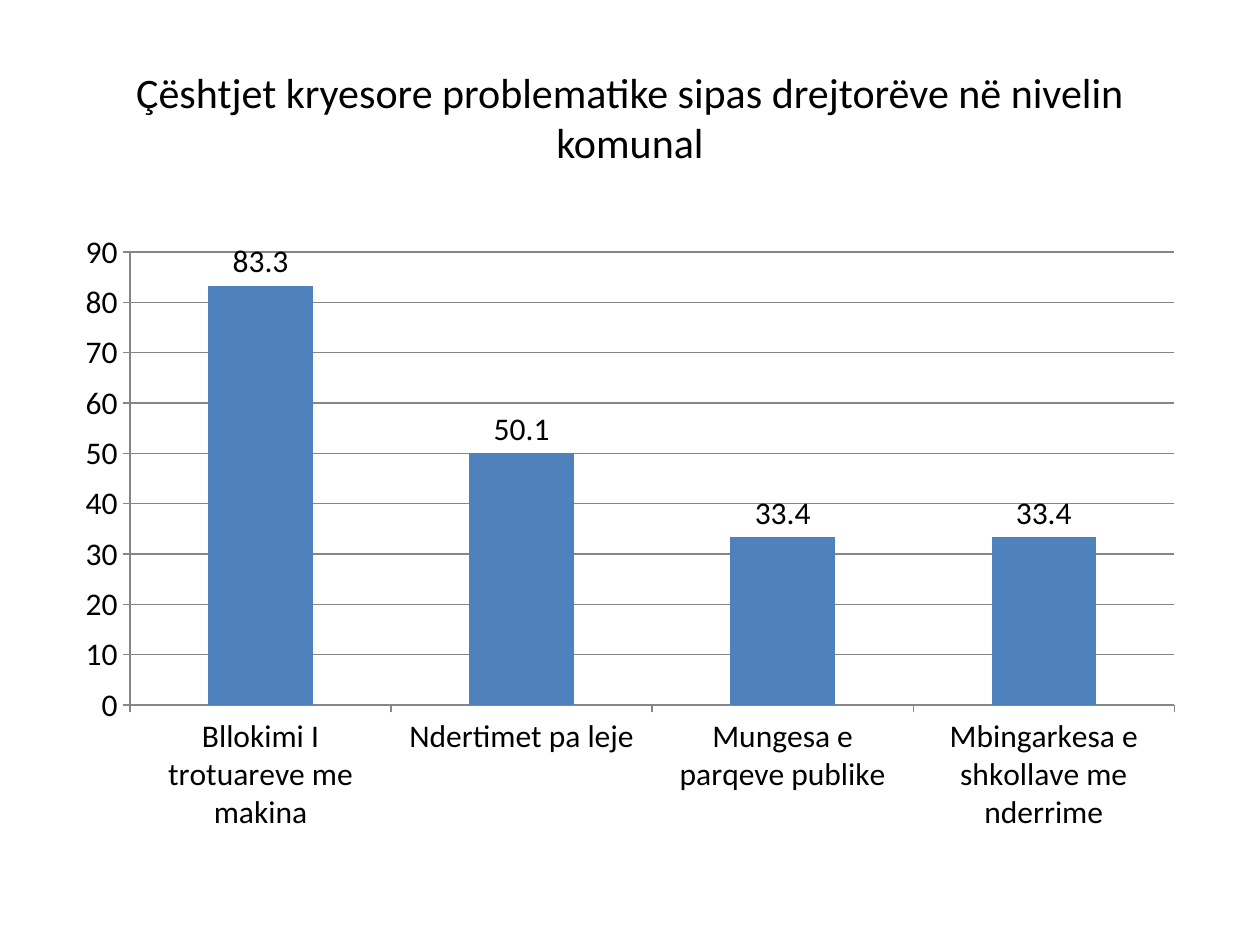
from typing import NamedTuple

from pptx import Presentation
from pptx.chart.data import CategoryChartData
from pptx.dml.color import RGBColor
from pptx.enum.chart import XL_CHART_TYPE, XL_LABEL_POSITION, XL_TICK_MARK
from pptx.enum.text import MSO_ANCHOR, PP_ALIGN
from pptx.util import Inches, Pt

BLACK = RGBColor(0, 0, 0)
BLUE = RGBColor(0x4F, 0x81, 0xBD)
GRAY = RGBColor(0x86, 0x86, 0x86)
FACE = "Calibri"
WIDE, HIGH = Inches(10), Inches(7.5)


class Box(NamedTuple):
    left: float
    top: float
    width: float
    height: float

    def scale(self) -> tuple[int, int, int, int]:
        return (round(self.left * WIDE), round(self.top * HIGH),
                round(self.width * WIDE), round(self.height * HIGH))


class Issue(NamedTuple):
    name: str
    share: float


HEAD = Box(0.05, 0.04, 0.9, 1 / 6)
PLOT = Box(0.05, 0.7 / 3, 0.9, 0.66)
ISSUES = [
    Issue("Bllokimi I trotuareve me makina", 83.3),
    Issue("Ndertimet pa leje", 50.1),
    Issue("Mungesa e parqeve publike", 33.4),
    Issue("Mbingarkesa e shkollave me nderrime", 33.4),
]


def style(font, size: int) -> None:
    font.name = FACE
    font.size = Pt(size)
    font.color.rgb = BLACK


def add_title(slide, text: str) -> None:
    title = slide.shapes.title
    title.left, title.top, title.width, title.height = HEAD.scale()
    frame = title.text_frame
    frame.text = text
    frame.word_wrap = True
    frame.vertical_anchor = MSO_ANCHOR.MIDDLE
    line = frame.paragraphs[0]
    line.alignment = PP_ALIGN.CENTER
    style(line.runs[0].font, 24)


def add_bars(slide, issues: list[Issue]) -> None:
    data = CategoryChartData(number_format="General")
    data.categories = [issue.name for issue in issues]
    data.add_series("Series 1", [issue.share for issue in issues])
    chart = slide.shapes.add_chart(
        XL_CHART_TYPE.COLUMN_CLUSTERED, *PLOT.scale(), data).chart
    chart.has_legend = False
    chart.has_title = False
    style(chart.font, 18)

    for axis in (chart.category_axis, chart.value_axis):
        axis.major_tick_mark = XL_TICK_MARK.OUTSIDE
        axis.minor_tick_mark = XL_TICK_MARK.NONE
        axis.format.line.color.rgb = GRAY
    scale = chart.value_axis
    scale.minimum_scale, scale.maximum_scale, scale.major_unit = 0, 90, 10
    scale.has_major_gridlines = True
    scale.major_gridlines.format.line.color.rgb = GRAY

    plot = chart.plots[0]
    plot.gap_width = 150
    plot.vary_by_categories = False
    fill = plot.series[0].format.fill
    fill.solid()
    fill.fore_color.rgb = BLUE
    labels = plot.series[0].data_labels
    labels.show_value = True
    labels.position = XL_LABEL_POSITION.OUTSIDE_END
    style(labels.font, 18)


def main() -> None:
    deck = Presentation()
    deck.slide_width, deck.slide_height = WIDE, HIGH
    slide = deck.slides.add_slide(deck.slide_layouts[5])
    add_title(slide, "Çështjet kryesore problematike sipas drejtorëve "
                     "në nivelin komunal")
    add_bars(slide, ISSUES)
    deck.save("out.pptx")


if __name__ == "__main__":
    main()
